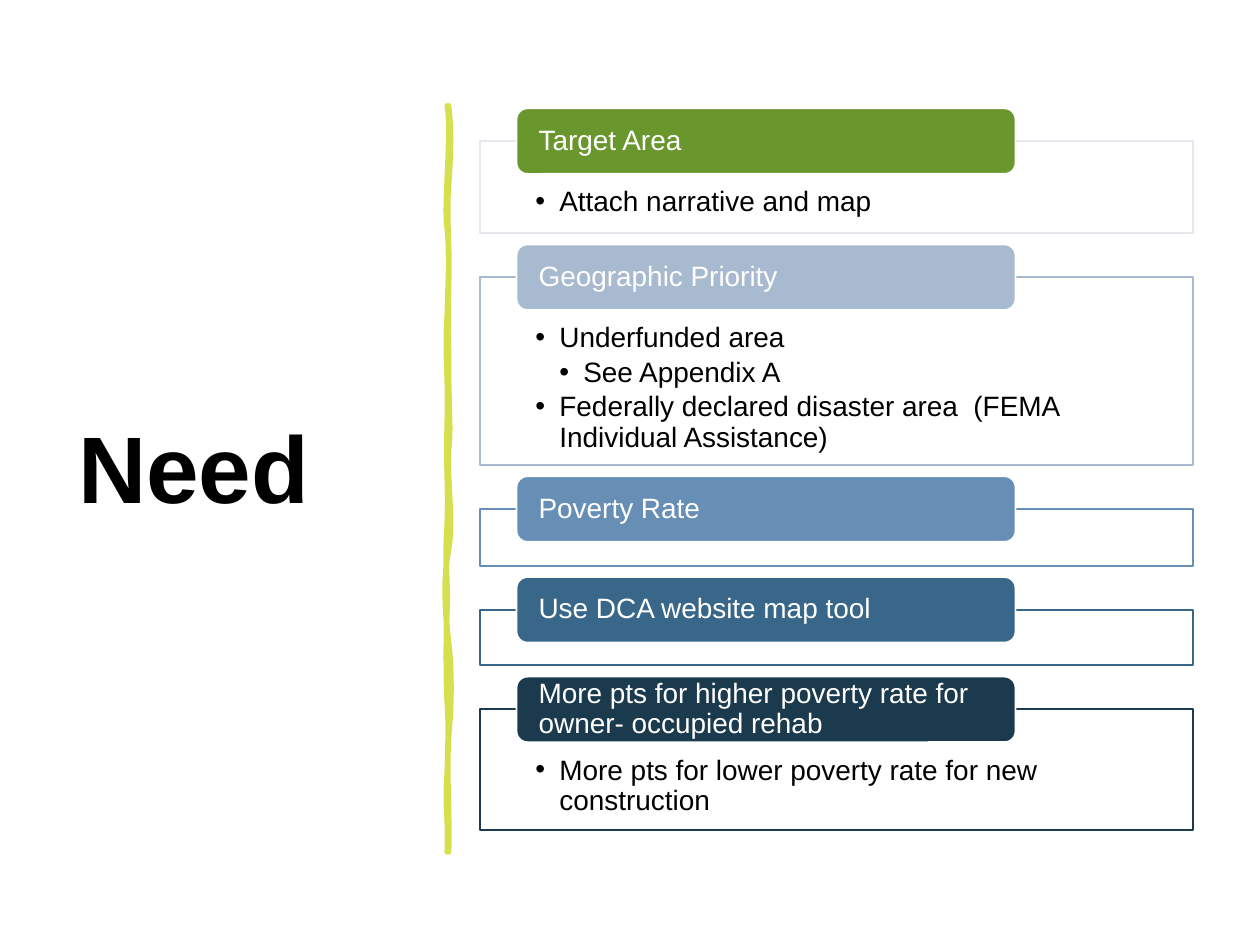
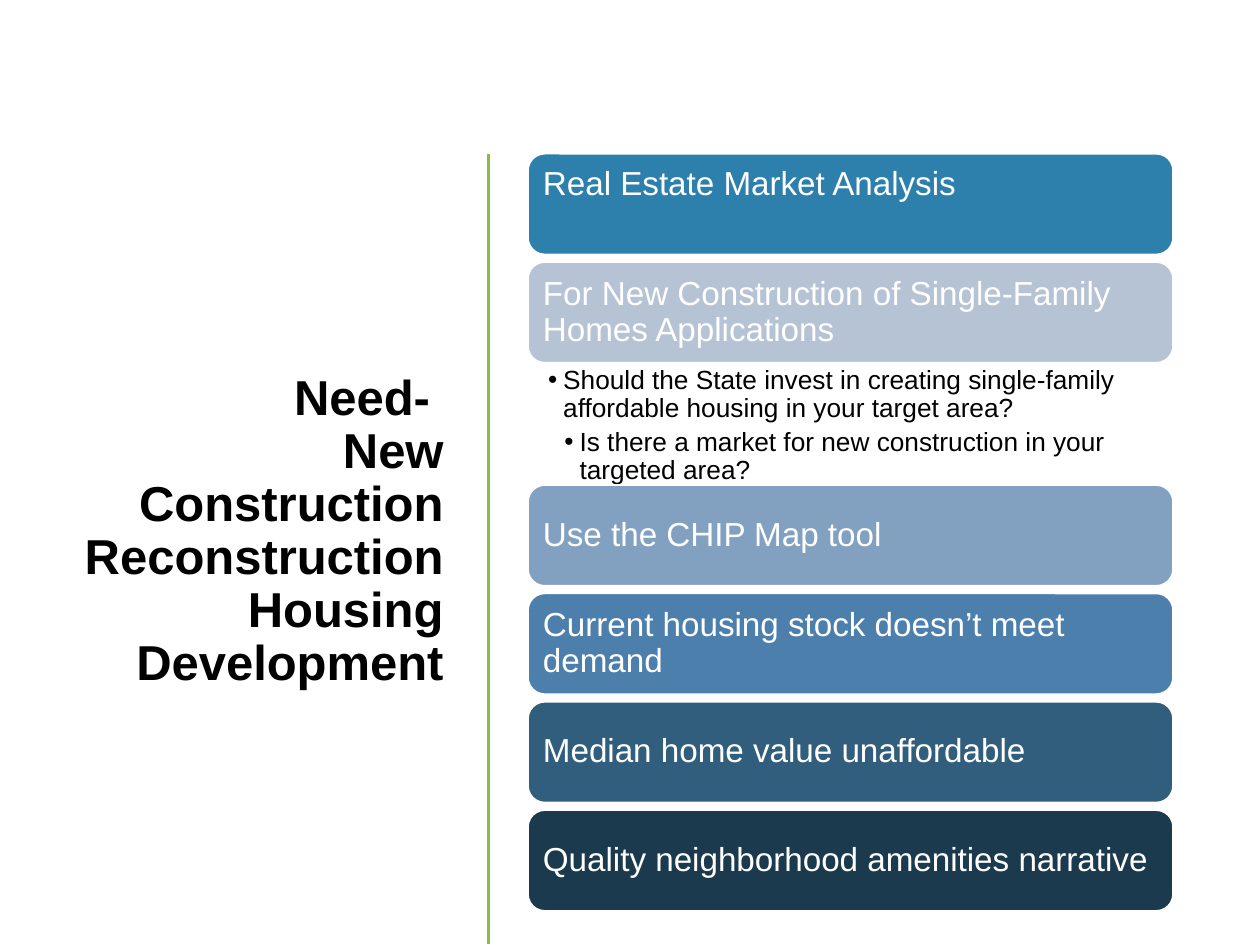
from lxml import etree
from pptx import Presentation
from pptx.dml.color import RGBColor
from pptx.enum.shapes import MSO_CONNECTOR, MSO_SHAPE
from pptx.enum.text import MSO_ANCHOR, MSO_AUTO_SIZE, PP_ALIGN
from pptx.oxml.ns import qn
from pptx.util import Pt

PX = 9144
FONT = "Arial"
BLACK, WHITE, LIME, GREEN = "000000", "FFFFFF", "D5E04E", "8CBB45"
NAVY = "1B3A4D"
TITLE_ONLY = 5
LEFT, RIGHT = PP_ALIGN.LEFT, PP_ALIGN.RIGHT
TOP, MIDDLE = MSO_ANCHOR.TOP, MSO_ANCHOR.MIDDLE
RECTANGLE, ROUNDED = MSO_SHAPE.RECTANGLE, MSO_SHAPE.ROUNDED_RECTANGLE
STRAIGHT = MSO_CONNECTOR.STRAIGHT
NO_AUTOFIT = MSO_AUTO_SIZE.NONE

NEED_CARDS = [
    ("Target Area", "6A972D", "E4E8EE", 73, [(1, "Attach narrative and map")]),
    ("Geographic Priority", "A8BACF", "A8BACF", 149, [
        (1, "Underfunded area"),
        (2, "See Appendix A"),
        (1, "Federally declared disaster area  (FEMA Individual Assistance)"),
    ]),
    ("Poverty Rate", "678FB6", "678FB6", 45, []),
    ("Use DCA website map tool", "39678A", "39678A", 44, []),
    ("More pts for higher poverty rate for owner- occupied rehab", NAVY, NAVY, 96,
     [(1, "More pts for lower poverty rate for new construction")]),
]

HOUSING_BARS = [
    ("Real Estate Market Analysis\n", "2D7FAC", []),
    ("For New Construction of Single-Family Homes Applications", "B5C3D5", [
        (1, "Should the State invest in creating single-family affordable housing in your target area?"),
        (2, "Is there a market for new construction in your targeted area?"),
    ]),
    ("Use the CHIP Map tool", "82A0C0", []),
    ("Current housing stock doesn’t meet demand", "4D7FAC", []),
    ("Median home value unaffordable", "325E7E", []),
    ("Quality neighborhood amenities narrative", NAVY, []),
]

BRUSH_START = (356, 84)
BRUSH_CURVES = [
    ((358, 102), (358, 119), (356, 146)), ((354, 173), (357, 195), (356, 226)),
    ((355, 257), (356, 262), (356, 294)), ((356, 325), (358, 342), (356, 356)),
    ((354, 370), (360, 414), (356, 436)), ((352, 457), (353, 484), (356, 510)),
    ((359, 536), (358, 564), (356, 584)), ((354, 603), (357, 650), (356, 676)),
    ((356, 675), (355, 675), (355, 676)), ((356, 646), (353, 644), (355, 613)),
    ((356, 583), (356, 570), (355, 557)), ((354, 544), (354, 495), (355, 477)),
    ((355, 459), (353, 445), (355, 415)), ((356, 386), (354, 373), (355, 335)),
    ((356, 298), (353, 281), (355, 250)), ((356, 218), (357, 200), (355, 181)),
    ((352, 163), (359, 104), (355, 84)),
]


def px(*lengths):
    return [round(length * PX) for length in lengths]


def color(value):
    return RGBColor.from_string(value)


def set_frame(frame, insets, anchor):
    frame.word_wrap = True
    frame.auto_size = NO_AUTOFIT
    frame.vertical_anchor = anchor
    (frame.margin_left, frame.margin_top,
     frame.margin_right, frame.margin_bottom) = px(*insets)


def add_text(paragraph, text, size, ink, alignment=LEFT, bold=False):
    paragraph.alignment = alignment
    paragraph.line_spacing = 0.9
    for index, line in enumerate(text.split("\n")):
        if index:
            paragraph.add_line_break()
        if line:
            run = paragraph.add_run()
            run.text = line
            run.font.name = FONT
            run.font.size = Pt(size)
            run.font.bold = bold
            run.font.color.rgb = color(ink)


def add_block(slide, kind, box, fill, line):
    shape = slide.shapes.add_shape(kind, *px(*box))
    shape.shadow.inherit = False
    shape.fill.solid()
    shape.fill.fore_color.rgb = color(fill)
    shape.line.color.rgb = color(line)
    shape.line.width = Pt(1)
    return shape


def add_header(slide, box, text, fill, size, insets):
    shape = add_block(slide, ROUNDED, box, fill, WHITE)
    set_frame(shape.text_frame, insets, MIDDLE)
    add_text(shape.text_frame.paragraphs[0], text, size, WHITE)


def fill_bullets(frame, bullets, size, margins, gap):
    for index, (level, text) in enumerate(bullets):
        paragraph = frame.add_paragraph() if index else frame.paragraphs[0]
        properties = paragraph._p.get_or_add_pPr()
        properties.set("marL", str(px(margins[level - 1])[0]))
        properties.set("indent", str(px(-margins[0])[0]))
        etree.SubElement(properties, qn("a:buFont")).set("typeface", FONT)
        etree.SubElement(properties, qn("a:buChar")).set("char", "•")
        paragraph.level = level
        paragraph.space_after = Pt(gap)
        add_text(paragraph, text, size, BLACK)


def place_title(slide, box, text, size, alignment):
    title = slide.shapes.title
    title.left, title.top, title.width, title.height = px(*box)
    set_frame(title.text_frame, (10, 5, 10, 5), MIDDLE)
    add_text(title.text_frame.paragraphs[0], text, size, BLACK, alignment, True)


def draw_brush_stroke(slide):
    builder = slide.shapes.build_freeform(*px(*BRUSH_START))
    builder.add_line_segments([px(*point) for curve in BRUSH_CURVES for point in curve])
    stroke = builder.convert_to_shape()
    segments = list(stroke._element.iter(qn("a:lnTo")))
    outline = segments[0].getparent()
    for first in range(0, len(segments), 3):
        curve = etree.SubElement(outline, qn("a:cubicBezTo"))
        for segment in segments[first:first + 3]:
            curve.append(segment[0])
            outline.remove(segment)
    etree.SubElement(outline, qn("a:close"))
    stroke.shadow.inherit = False
    stroke.fill.solid()
    stroke.fill.fore_color.rgb = color(LIME)
    stroke.line.color.rgb = color(LIME)
    stroke.line.width = Pt(3.25)


def draw_divider(slide, x, top, bottom):
    divider = slide.shapes.add_connector(STRAIGHT, *px(x, top, x, bottom))
    divider.line.color.rgb = color(GREEN)
    divider.line.width = Pt(1.75)
    etree.SubElement(divider._element.spPr, qn("a:effectLst"))


def draw_need_cards(slide, left, top, width):
    for text, fill, border, height, bullets in NEED_CARDS:
        body = add_block(slide, RECTANGLE, (left, top, width, height), WHITE, border)
        if bullets:
            set_frame(body.text_frame, (44, 37, 44, 12), TOP)
            fill_bullets(body.text_frame, bullets, 16, (19, 38), 2.4)
        add_header(slide, (left + 29, top - 26, 396, 52), text, fill, 16, (15, 0, 15, 0))
        top += height + 35


def draw_housing_bars(slide, left, top, width):
    bar_height, gap, list_height = 80, 6, 97
    for text, fill, bullets in HOUSING_BARS:
        add_header(slide, (left, top, width, bar_height), text, fill, 19, (8, 8, 8, 8))
        top += bar_height
        if bullets:
            textbox = slide.shapes.add_textbox(*px(left, top, width, list_height))
            set_frame(textbox.text_frame, (16, 3, 15, 3), TOP)
            fill_bullets(textbox.text_frame, bullets, 15, (12, 25), 3)
            top += list_height
        else:
            top += gap


def build_need(slide):
    place_title(slide, (52, 70, 280, 611), "Need", 54, LEFT)
    draw_brush_stroke(slide)
    draw_need_cards(slide, 381, 112, 566)


def build_housing(slide):
    title = "Need- \nNew Construction\nReconstruction Housing Development"
    place_title(slide, (39, 117, 323, 611), title, 28, RIGHT)
    draw_divider(slide, 388, 122, 749)
    draw_housing_bars(slide, 419, 122, 512)


def main():
    presentation = Presentation()
    presentation.slide_width, presentation.slide_height = px(1000, 750)
    for build in (build_need, build_housing):
        build(presentation.slides.add_slide(presentation.slide_layouts[TITLE_ONLY]))
    presentation.save("out.pptx")


if __name__ == "__main__":
    main()
